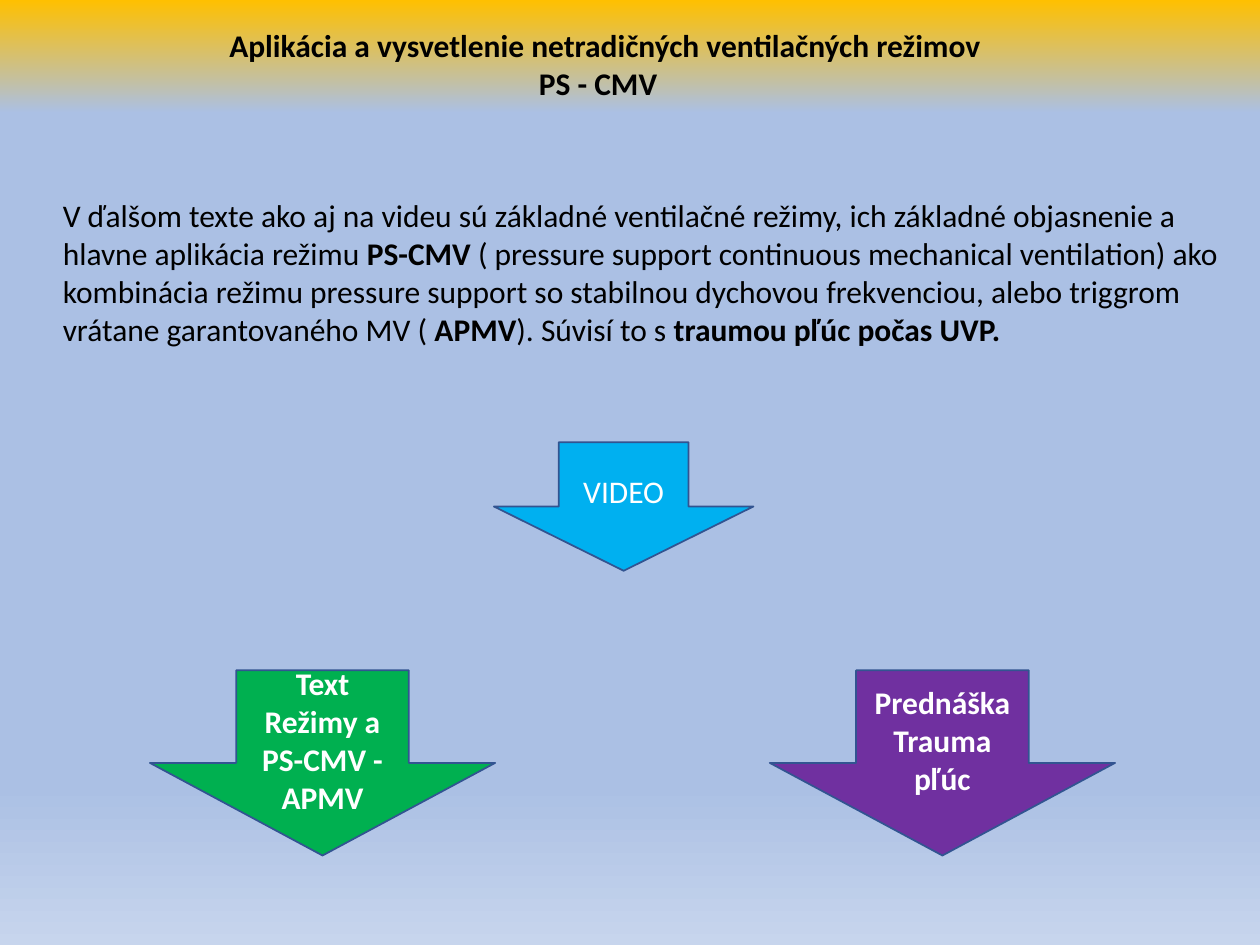
from dataclasses import dataclass

from lxml import etree
from pptx import Presentation
from pptx.dml.color import RGBColor
from pptx.enum.shapes import MSO_SHAPE
from pptx.enum.text import MSO_ANCHOR, MSO_AUTO_SIZE, PP_ALIGN
from pptx.oxml.ns import qn
from pptx.util import Inches, Pt

DOWN_ARROW = MSO_SHAPE.DOWN_ARROW
MIDDLE = MSO_ANCHOR.MIDDLE
TOP = MSO_ANCHOR.TOP
FIT_SHAPE = MSO_AUTO_SIZE.SHAPE_TO_FIT_TEXT
LEFT = PP_ALIGN.LEFT
CENTER = PP_ALIGN.CENTER

SLIDE_WIDTH, SLIDE_HEIGHT = Inches(10), Inches(7.5)
COLUMNS, ROWS = 100, 75


@dataclass(frozen=True)
class Theme:
    font: str = "Calibri"
    text_size: int = 18
    outline_width: int = 1
    ink: str = "000000"
    light: str = "FFFFFF"
    outline: str = "325491"
    video: str = "00B0F0"
    reading: str = "00B050"
    lecture: str = "7030A0"
    background: tuple = ((0, "FFC000"), (12, "ABC0E4"), (83, "ABC0E4"), (100, "C7D5ED"))


THEME = Theme()


def grid_box(column, row, columns, rows):
    cell_width, cell_height = SLIDE_WIDTH / COLUMNS, SLIDE_HEIGHT / ROWS
    return (
        round(column * cell_width),
        round(row * cell_height),
        round(columns * cell_width),
        round(rows * cell_height),
    )


def write_text(frame, paragraphs, color=THEME.ink, align=LEFT, anchor=TOP, wrap=True):
    frame.word_wrap = wrap
    frame.vertical_anchor = anchor
    for index, runs in enumerate(paragraphs):
        paragraph = frame.add_paragraph() if index else frame.paragraphs[0]
        paragraph.alignment = align
        for text, bold in runs:
            run = paragraph.add_run()
            run.text = text
            run.font.name = THEME.font
            run.font.size = Pt(THEME.text_size)
            run.font.bold = bold
            run.font.color.rgb = RGBColor.from_string(color)


def paint_background(slide):
    fill = slide.background.fill
    fill.gradient()
    fill.gradient_angle = 270
    stops = next(slide.element.iter(qn("a:gsLst")))
    for stop in list(stops):
        stops.remove(stop)
    for percent, color in THEME.background:
        stop = etree.SubElement(stops, qn("a:gs"), pos=str(percent * 1000))
        etree.SubElement(stop, qn("a:srgbClr"), val=color)


def add_text_region(slide, box, paragraphs, **text_format):
    frame = slide.shapes.add_textbox(*box).text_frame
    write_text(frame, paragraphs, **text_format)
    frame.auto_size = FIT_SHAPE


def add_arrow(slide, box, lines, color, bold=True):
    arrow = slide.shapes.add_shape(DOWN_ARROW, *box)
    arrow.shadow.inherit = False
    arrow.fill.solid()
    arrow.fill.fore_color.rgb = RGBColor.from_string(color)
    arrow.line.color.rgb = RGBColor.from_string(THEME.outline)
    arrow.line.width = Pt(THEME.outline_width)
    paragraphs = [[(line, bold)] for line in lines]
    write_text(arrow.text_frame, paragraphs, color=THEME.light, align=CENTER, anchor=MIDDLE)


def build_slide(slide):
    paint_background(slide)
    title = [
        [(" ", False), ("Aplikácia a vysvetlenie netradičných ventilačných režimov", True)],
        [("PS - CMV ", True)],
    ]
    introduction = [[
        ("V ďalšom texte ako aj na videu sú základné ventilačné režimy, ich základné "
         "objasnenie a hlavne aplikácia režimu ", False),
        ("PS-CMV ", True),
        ("( pressure support continuous mechanical ventilation) ako kombinácia režimu "
         "pressure support so stabilnou dychovou frekvenciou, alebo triggrom vrátane "
         "garantovaného MV ( ", False),
        ("APMV", True),
        ("). Súvisí to s ", False),
        ("traumou pľúc počas UVP.", True),
    ]]
    add_text_region(slide, grid_box(16.4, 1.6, 62.7, 7.1), title, align=CENTER, wrap=False)
    add_text_region(slide, grid_box(4, 15.1, 94.1, 13.1), introduction)
    add_arrow(slide, grid_box(39.2, 35.1, 20.6, 10.2), ["VIDEO"], THEME.video, bold=False)
    lower_arrows = (
        (11.9, ["Text", "Režimy a PS-CMV - APMV"], THEME.reading),
        (61.1, ["Prednáška", "Trauma pľúc"], THEME.lecture),
    )
    for column, lines, color in lower_arrows:
        add_arrow(slide, grid_box(column, 53.2, 27.4, 14.7), lines, color)


def main():
    presentation = Presentation()
    presentation.slide_width, presentation.slide_height = SLIDE_WIDTH, SLIDE_HEIGHT
    build_slide(presentation.slides.add_slide(presentation.slide_layouts[6]))
    presentation.save("out.pptx")


if __name__ == "__main__":
    main()
